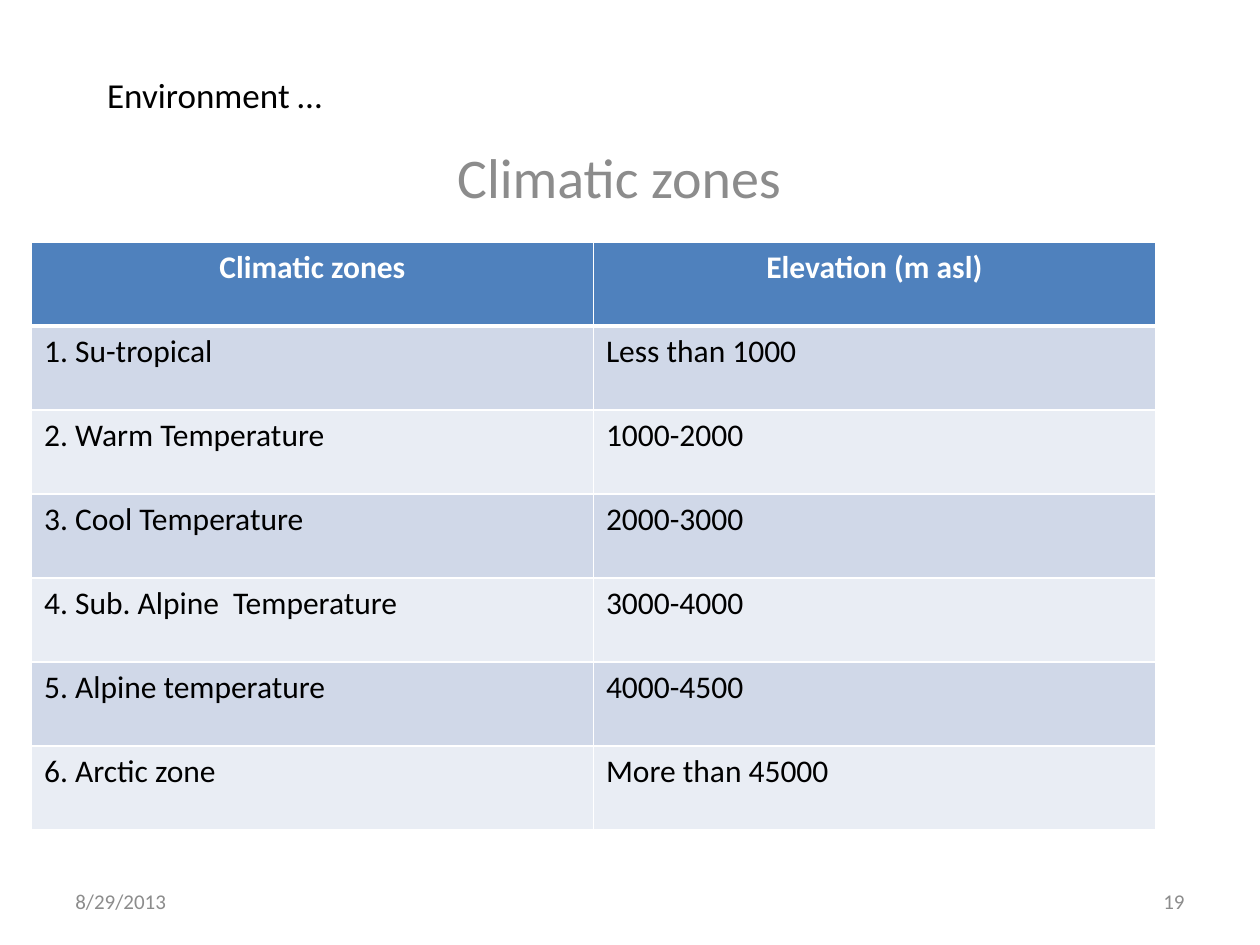
"""Build the climatic zones slide with its elevation table."""
from dataclasses import dataclass

from lxml import etree
from pptx import Presentation
from pptx.dml.color import RGBColor
from pptx.enum.text import MSO_ANCHOR, PP_ALIGN
from pptx.oxml.ns import qn
from pptx.util import Inches, Pt

LEFT, CENTER, RIGHT = PP_ALIGN.LEFT, PP_ALIGN.CENTER, PP_ALIGN.RIGHT
TOP, MIDDLE = MSO_ANCHOR.TOP, MSO_ANCHOR.MIDDLE
FONT = "Calibri"
COLORS = {
    "black": "000000",
    "white": "FFFFFF",
    "gray": "8C8C8C",
    "header": "4F81BD",
    "odd": "D0D8E8",
    "even": "E9EDF4",
}
ZONES = [
    ("Climatic zones", "Elevation (m asl)"),
    ("1. Su-tropical", "Less than 1000"),
    ("2. Warm Temperature", "1000-2000"),
    ("3. Cool Temperature", "2000-3000"),
    ("4. Sub. Alpine  Temperature", "3000-4000"),
    ("5. Alpine temperature", "4000-4500"),
    ("6. Arctic zone", "More than 45000"),
]


@dataclass
class Label:
    text: str
    left: float
    top: float
    width: float
    height: float
    size: float
    color: str = "gray"
    align: PP_ALIGN = LEFT
    anchor: MSO_ANCHOR = MIDDLE
    space_before: float = 0


TITLE = Label("Environment …", 0.75, 0.5, 8.5, 0.5, 20, "black")
LABELS = [
    Label("Climatic zones", 0.5, 1.08, 8.83, 5.83, 32, "gray", CENTER, TOP, 6.4),
    Label("8/29/2013", 0.5, 6.95, 2.33, 0.4, 12),
    Label("19", 7.17, 6.95, 2.33, 0.4, 12, align=RIGHT),
]


def style_paragraph(para, size: float, color: str, align: PP_ALIGN, bold: bool = False) -> None:
    """Set the font and alignment of a paragraph."""
    para.alignment = align
    para.font.name = FONT
    para.font.size = Pt(size)
    para.font.bold = bold
    para.font.color.rgb = RGBColor.from_string(COLORS[color])


def fill_label(box, label: Label) -> None:
    """Place a text shape and write its label."""
    box.left, box.top = Inches(label.left), Inches(label.top)
    box.width, box.height = Inches(label.width), Inches(label.height)
    frame = box.text_frame
    frame.text = label.text
    frame.word_wrap = True
    frame.vertical_anchor = label.anchor
    para = frame.paragraphs[0]
    para.space_before = Pt(label.space_before)
    style_paragraph(para, label.size, label.color, label.align)


def set_borders(cell, bottom: float, top: float) -> None:
    """Draw white borders around a table cell."""
    properties = cell._tc.get_or_add_tcPr()
    for side, width in (("L", 1), ("R", 1), ("T", top), ("B", bottom)):
        line = etree.SubElement(properties, qn(f"a:ln{side}"), w=str(Pt(width)))
        fill = etree.SubElement(line, qn("a:solidFill"))
        etree.SubElement(fill, qn("a:srgbClr"), val=COLORS["white"])


def add_zone_table(page) -> None:
    """Add the table of zones and elevations."""
    table = page.shapes.add_table(
        len(ZONES), 2, Inches(0.25), Inches(1.92), Inches(8.92), Inches(4.67)
    ).table
    for row, texts in enumerate(ZONES):
        header = row == 0
        fill = "header" if header else "odd" if row % 2 else "even"
        for column, text in enumerate(texts):
            cell = table.cell(row, column)
            cell.text = text
            set_borders(cell, bottom=3 if header else 1, top=3 if row == 1 else 1)
            cell.fill.solid()
            cell.fill.fore_color.rgb = RGBColor.from_string(COLORS[fill])
            style_paragraph(
                cell.text_frame.paragraphs[0],
                18,
                "white" if header else "black",
                CENTER if header else LEFT,
                header,
            )


def main() -> None:
    """Create the deck and save it."""
    deck = Presentation()
    deck.slide_width, deck.slide_height = Inches(10), Inches(7.5)
    page = deck.slides.add_slide(deck.slide_layouts[5])
    fill_label(page.shapes.title, TITLE)
    subtitle, *footers = LABELS
    fill_label(page.shapes.add_textbox(0, 0, 0, 0), subtitle)
    add_zone_table(page)
    for footer in footers:
        fill_label(page.shapes.add_textbox(0, 0, 0, 0), footer)
    deck.save("out.pptx")


if __name__ == "__main__":
    main()
